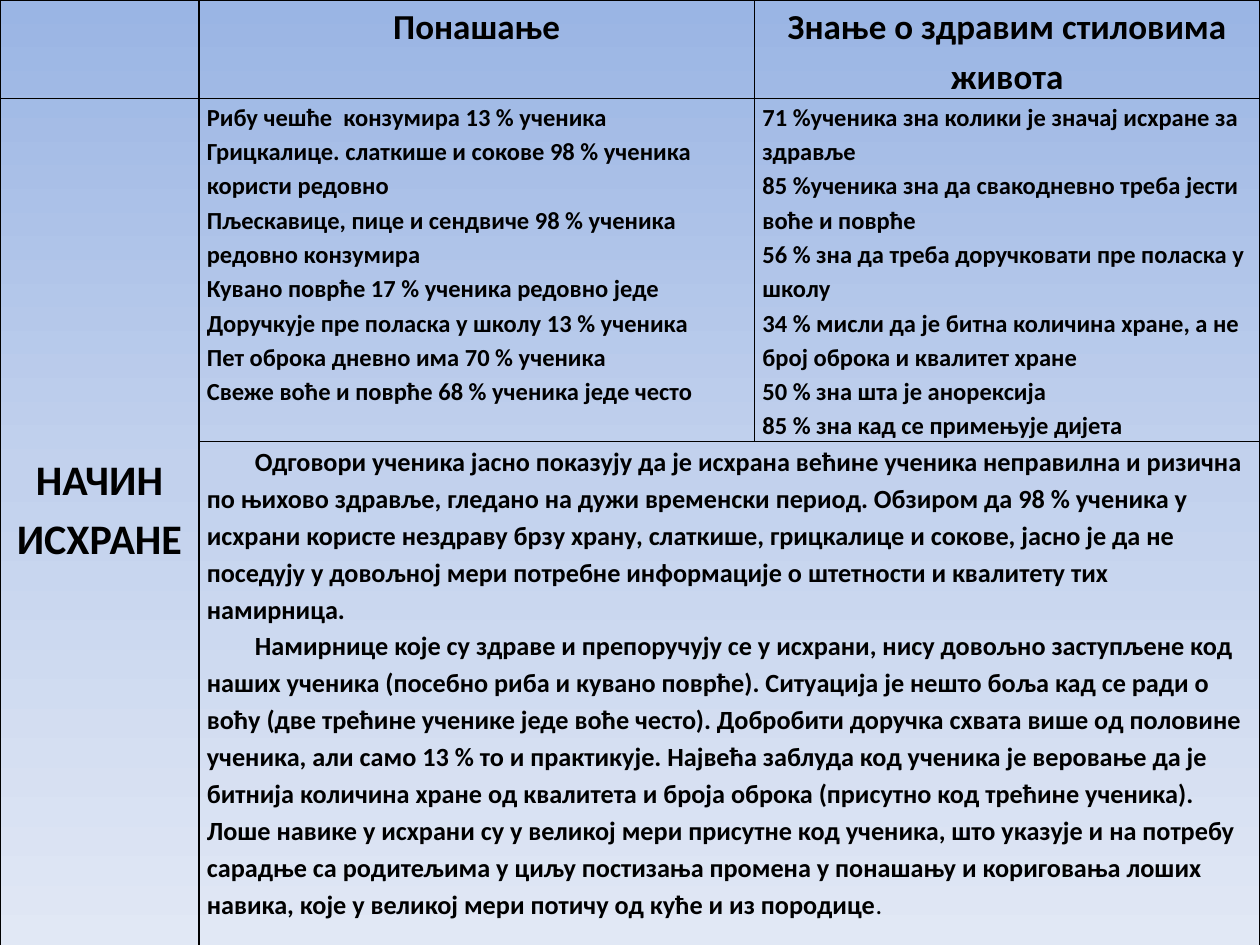
"""Build a slide with a table on pupils' eating habits and their knowledge of healthy food."""
from dataclasses import dataclass

from lxml import etree
from pptx import Presentation
from pptx import util as u
from pptx.dml.color import RGBColor
from pptx.enum import text
from pptx.oxml.ns import qn


@dataclass(frozen=True)
class Theme:
    font: str = "Calibri"
    ink: str = "000000"
    backdrop: tuple = ((0, "9AB5E4"), (50, "C2D1ED"), (100, "E1E8F5"))
    header: int = 20
    topic: int = 24
    finding: int = 14
    conclusion: int = 15
    spacing: float = 1.15
    border: int = 1


THEME = Theme()
COLUMNS = (4.01, 11.2, 10.19)
ROWS = (1.98, 6.91, 10.46)
SIDE_MARGIN = 0.16
TOPIC_LIFT = 0.9
FIRST_LINE = 0.97

HEADERS = ["Понашање", "Знање о здравим стиловима живота"]
TOPIC = "НАЧИН ИСХРАНЕ"
BEHAVIOUR = [
    "Рибу чешће  конзумира 13 % ученика",
    "Грицкалице. слаткише и сокове 98 % ученика користи редовно",
    "Пљескавице, пице и сендвиче 98 % ученика редовно конзумира",
    "Кувано поврће 17 % ученика редовно једе",
    "Доручкује пре поласка у школу 13 % ученика",
    "Пет оброка дневно има 70 % ученика",
    "Свеже воће и поврће 68 % ученика једе често",
]
KNOWLEDGE = [
    "71 %ученика зна колики је значај исхране за здравље",
    "85 %ученика зна да свакодневно треба јести воће и поврће",
    "56 % зна да треба доручковати пре поласка у школу",
    "34 % мисли да је битна количина хране, а не број оброка и квалитет хране",
    "50 % зна шта је анорексија",
    "85 % зна кад се примењује дијета",
]
INDENTED = [
    "Одговори ученика јасно показују да је исхрана већине ученика неправилна и ризична по "
    "њихово здравље, гледано на дужи временски период. Обзиром да 98 % ученика у исхрани "
    "користе нездраву брзу храну, слаткише, грицкалице и сокове, јасно је да не поседују у "
    "довољној мери потребне информације о штетности и квалитету тих намирница.",
    "Намирнице које су здраве и препоручују се у исхрани, нису довољно заступљене код наших "
    "ученика (посебно риба и кувано поврће). Ситуација је нешто боља кад се ради о воћу (две "
    "трећине ученике једе воће често). Добробити доручка схвата више од половине ученика, али "
    "само 13 % то и практикује. Највећа заблуда код ученика је веровање да је битнија количина "
    "хране од квалитета и броја оброка (присутно код трећине ученика).",
]
CLOSING = (
    "Лоше навике у исхрани су у великој мери присутне код ученика, што указује и на потребу "
    "сарадње са родитељима у циљу постизања промена у понашању и кориговања лоших навика, које "
    "у великој мери потичу од куће и из породице"
)


def paint_backdrop(slide):
    fill = slide.background.fill
    fill.gradient()
    fill.gradient_angle = 270
    stops = next(slide.element.iter(qn("a:gsLst")))
    for stop in list(stops):
        stops.remove(stop)
    for percent, colour in THEME.backdrop:
        stop = etree.SubElement(stops, qn("a:gs"), pos=str(percent * 1000))
        etree.SubElement(stop, qn("a:srgbClr"), val=colour)


def style_cell(cell):
    cell.margin_left = cell.margin_right = u.Cm(SIDE_MARGIN)
    cell.margin_top = cell.margin_bottom = 0
    properties = cell._tc.get_or_add_tcPr()
    for side in ("lnL", "lnR", "lnT", "lnB"):
        line = etree.SubElement(properties, qn(f"a:{side}"), w=str(u.Pt(THEME.border)))
        solid = etree.SubElement(line, qn("a:solidFill"))
        etree.SubElement(solid, qn("a:srgbClr"), val=THEME.ink)
    cell.fill.background()


def add_run(paragraph, words, size, bold=True):
    run = paragraph.add_run()
    run.text = words
    run.font.name = THEME.font
    run.font.size = u.Pt(size)
    run.font.bold = bold
    run.font.color.rgb = RGBColor.from_string(THEME.ink)


def write(cell, lines, size, align=text.PP_ALIGN.LEFT):
    frame = cell.text_frame
    for number, words in enumerate(lines):
        paragraph = frame.add_paragraph() if number else frame.paragraphs[0]
        paragraph.alignment = align
        paragraph.line_spacing = THEME.spacing
        add_run(paragraph, words, size)
    return frame.paragraphs


def main():
    deck = Presentation()
    deck.slide_width, deck.slide_height = u.Cm(25.4), u.Cm(19.05)
    slide = deck.slides.add_slide(deck.slide_layouts[6])
    paint_backdrop(slide)

    habits = slide.shapes.add_table(
        len(ROWS), len(COLUMNS), 0, 0, u.Cm(sum(COLUMNS)), u.Cm(sum(ROWS))
    ).table
    habits.first_row = habits.horz_banding = False
    for column, width in zip(habits.columns, COLUMNS):
        column.width = u.Cm(width)
    for row, height in zip(habits.rows, ROWS):
        row.height = u.Cm(height)
    for cell in habits.iter_cells():
        style_cell(cell)

    topic, conclusion = habits.cell(1, 0), habits.cell(2, 1)
    topic.merge(habits.cell(2, 0))
    conclusion.merge(habits.cell(2, 2))

    for column, header in enumerate(HEADERS, 1):
        write(habits.cell(0, column), [header], THEME.header, text.PP_ALIGN.CENTER)
    write(topic, [TOPIC], THEME.topic, text.PP_ALIGN.CENTER)
    topic.vertical_anchor = text.MSO_ANCHOR.MIDDLE
    topic.margin_bottom = u.Cm(TOPIC_LIFT)
    for column, findings in enumerate((BEHAVIOUR, KNOWLEDGE), 1):
        write(habits.cell(1, column), findings, THEME.finding)

    *indented, closing = write(conclusion, [*INDENTED, CLOSING], THEME.conclusion)
    for paragraph in indented:
        paragraph._p.get_or_add_pPr().set("indent", str(u.Cm(FIRST_LINE)))
    add_run(closing, ".", THEME.conclusion, bold=False)

    deck.save("out.pptx")


if __name__ == "__main__":
    main()
